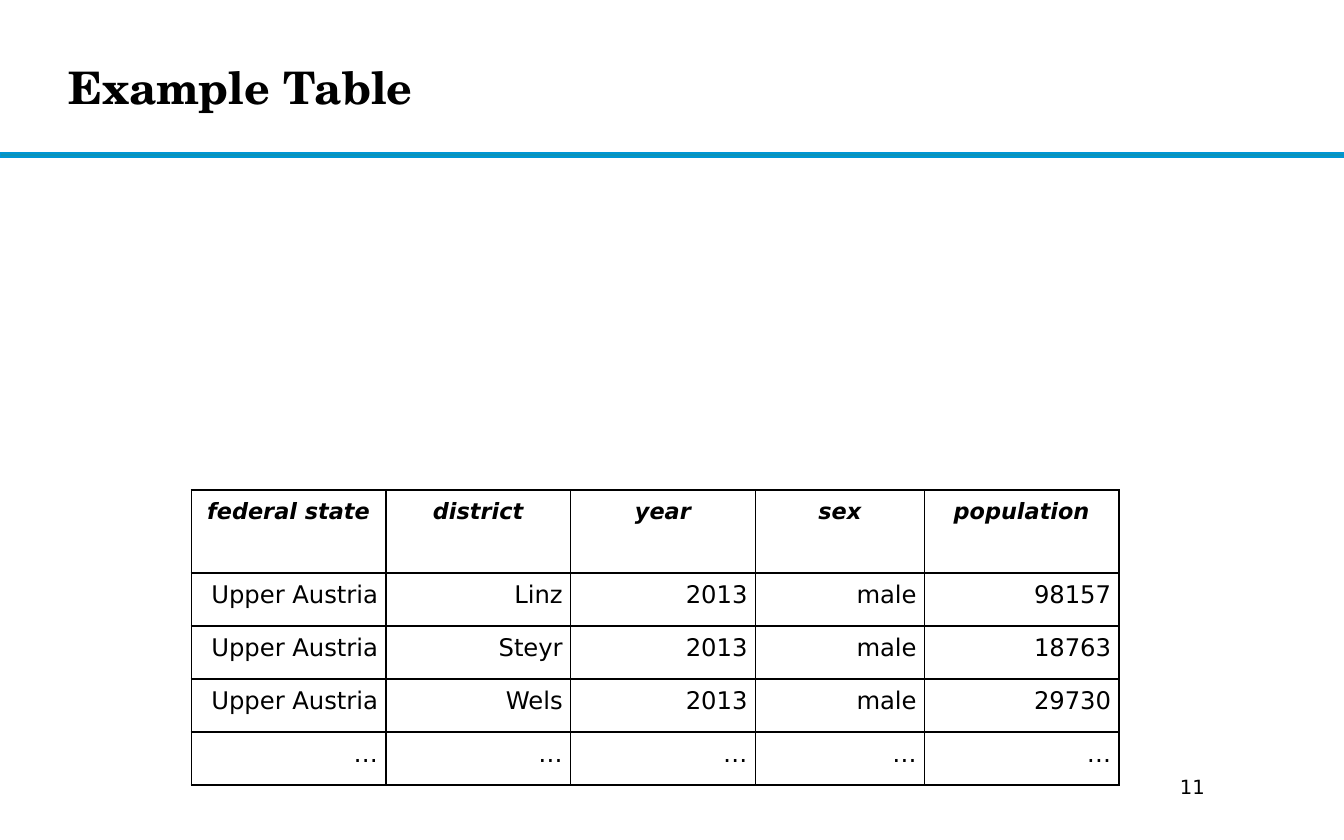
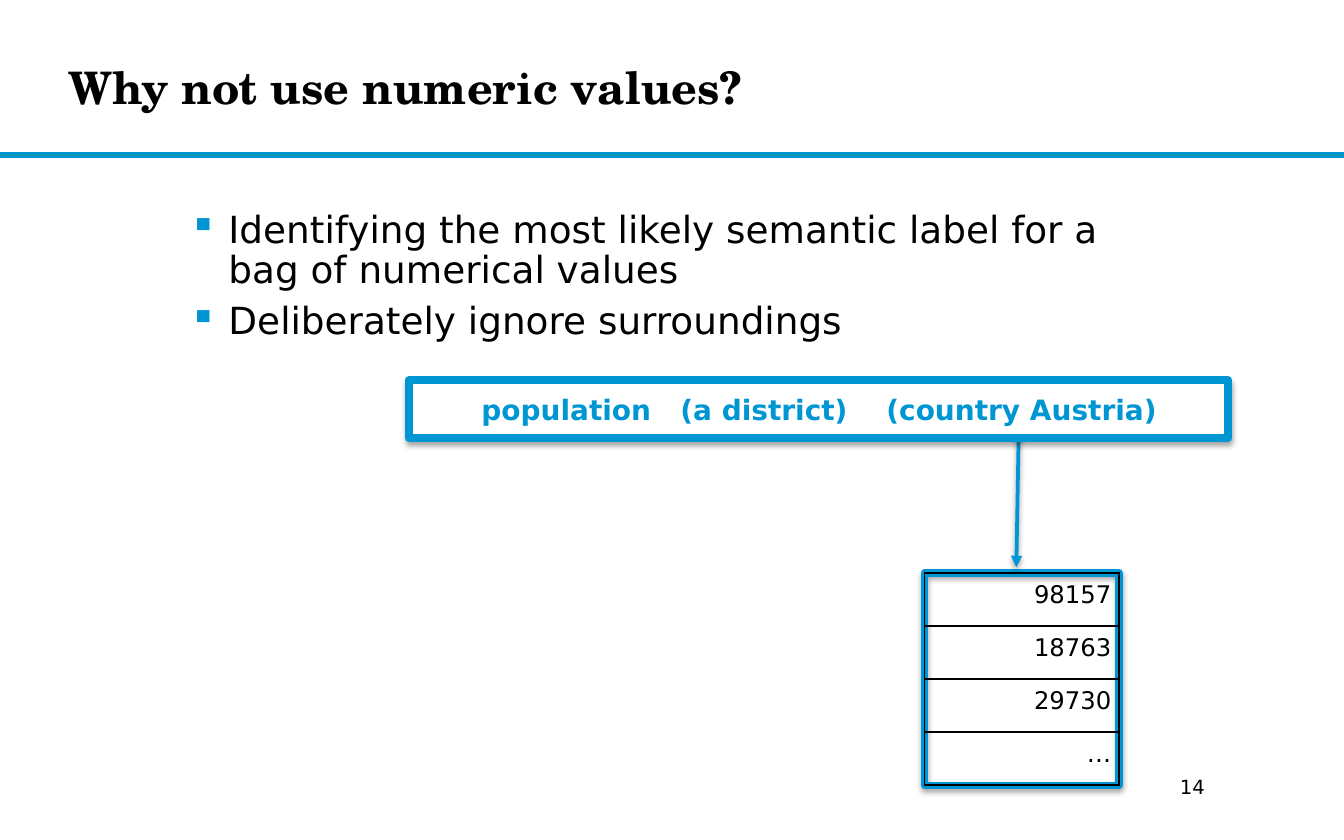
import pptx
import pptx.dml.color
import pptx.enum.shapes
import pptx.enum.text
import pptx.oxml
import pptx.oxml.ns
import pptx.util

Pt = pptx.util.Pt
RGBColor = pptx.dml.color.RGBColor
Align = pptx.enum.text.PP_ALIGN
Anchor = pptx.enum.text.MSO_ANCHOR
Shape = pptx.enum.shapes.MSO_SHAPE
Line = pptx.enum.shapes.MSO_CONNECTOR

BLACK = RGBColor(0x00, 0x00, 0x00)
WHITE = RGBColor(0xFF, 0xFF, 0xFF)
BLUE = RGBColor(0x00, 0x96, 0xD3)
TEAL = RGBColor(0x0C, 0x94, 0xB7)

SANS = "DejaVu Sans"
SERIF = "TeX Gyre Schola"
HEAD = dict(name=SERIF, size=Pt(24), bold=True)
BODY = dict(name=SANS, size=Pt(20))
PAGE = dict(name=SANS, size=Pt(10.5))
LABEL = dict(name=SANS, size=Pt(15), bold=True)
TOP = dict(name=SANS, size=Pt(12), bold=True, italic=True)
CELL = dict(name=SANS, size=Pt(13), bold=False)

ROW = 28.45
FIRST = 44.3
LEFT = 102.5
BASE = 262.6
COLS = [104.2, 99, 99, 90.6, 104.2]
LAST = LEFT + sum(COLS[:-1])
FIELDS = ["federal state", "district", "year", "sex", "population"]
COUNTS = ["98157", "18763", "29730", "…"]
TOWNS = ["Linz", "Steyr", "Wels"]


def put(item, values):
    for key, value in values.items():
        setattr(item, key, value)


def add(parent, text):
    node = pptx.oxml.parse_xml(text.replace(
        ">" if "/>" not in text.split(">")[0] + ">" else "/>",
        f' {pptx.oxml.ns.nsdecls("a")}>' if "/>" not in text.split(">")[0] + ">"
        else f' {pptx.oxml.ns.nsdecls("a")}/>', 1))
    parent.append(node)
    return node


class Deck:
    def __init__(self):
        self.file = pptx.Presentation()
        put(self.file, dict(slide_width=Pt(720), slide_height=Pt(450)))
        self.slide = None

    def start(self, title, page):
        self.slide = self.file.slides.add_slide(self.file.slide_layouts[6])
        self.box(0, 82, 720, 2.2, TEAL, 1)
        self.text(36.5, 10.8, 538.6, 71.3, [title], HEAD, (0, 0), Anchor.MIDDLE)
        self.text(625, 411.8, 44.6, 20.2, [page], PAGE, (7.2, 3.6))

    def style(self, para, form, color=BLACK):
        put(para.font, form)
        para.font.color.rgb = color

    def frame(self, frame, side, edge, anchor):
        put(frame, dict(word_wrap=True, vertical_anchor=anchor,
                        margin_left=Pt(side), margin_right=Pt(side),
                        margin_top=Pt(edge), margin_bottom=Pt(edge)))

    def text(self, x, y, w, h, lines, form, inset, anchor=Anchor.TOP, mark=None):
        frame = self.slide.shapes.add_textbox(Pt(x), Pt(y), Pt(w), Pt(h)).text_frame
        self.frame(frame, *inset, anchor)
        for i, line in enumerate(lines):
            para = frame.add_paragraph() if i else frame.paragraphs[0]
            para.text = line
            if mark:
                self.mark(para, mark)
            self.style(para, form)

    def mark(self, para, sign):
        prop = para._p.get_or_add_pPr()
        prop.set("marL", str(Pt(20.9)))
        prop.set("indent", str(-Pt(20.9)))
        add(prop, f'<a:buClr><a:srgbClr val="{BLUE}"/></a:buClr>')
        add(prop, f'<a:buChar char="{sign}"/>')
        put(para, dict(line_spacing=0.9, space_after=Pt(6)))

    def shade(self, prop, alpha, drop):
        part = prop.find(pptx.oxml.ns.qn("a:effectLst"))
        add(part, f'<a:outerShdw blurRad="{Pt(3)}" dist="{Pt(drop)}" dir="5400000" '
                  f'rotWithShape="0"><a:srgbClr val="{BLACK}">'
                  f'<a:alpha val="{alpha * 1000}"/></a:srgbClr></a:outerShdw>')

    def box(self, x, y, w, h, fill, width, shade=False):
        shape = self.slide.shapes.add_shape(Shape.RECTANGLE, Pt(x), Pt(y), Pt(w), Pt(h))
        shape.shadow.inherit = False
        if fill is None:
            shape.fill.background()
        else:
            shape.fill.solid()
            shape.fill.fore_color.rgb = fill
        shape.line.color.rgb = BLUE
        shape.line.width = Pt(width)
        if shade:
            self.shade(shape._element.spPr, 35, 1.8)
        return shape

    def label(self, x, y, w, h, parts, stops):
        frame = self.box(x, y, w, h, WHITE, 4, True).text_frame
        self.frame(frame, 2.9, 3.6, Anchor.MIDDLE)
        frame.margin_left = Pt(38.9)
        para = frame.paragraphs[0]
        para.text = "\t".join(parts)
        para.alignment = Align.LEFT
        tabs = add(para._p.get_or_add_pPr(), "<a:tabLst></a:tabLst>")
        for stop in stops:
            add(tabs, f'<a:tab pos="{Pt(stop)}" algn="l"/>')
        self.style(para, LABEL, BLUE)

    def arrow(self, x, y, to_x, to_y):
        link = self.slide.shapes.add_connector(
            Line.STRAIGHT, Pt(x), Pt(y), Pt(to_x), Pt(to_y))
        link.line.color.rgb = BLUE
        link.line.width = Pt(2)
        prop = link._element.spPr
        for end in ("head", "tail"):
            add(prop.find(pptx.oxml.ns.qn("a:ln")), f'<a:{end}End type="triangle"/>')
        add(prop, "<a:effectLst></a:effectLst>")
        self.shade(prop, 38, 1.6)

    def table(self, x, y, cols, rows, data, top=False):
        table = self.slide.shapes.add_table(
            len(rows), len(cols), Pt(x), Pt(y), Pt(sum(cols)), Pt(sum(rows))).table
        put(table, dict(first_row=top, horz_banding=False))
        for col, width in zip(table.columns, cols):
            col.width = Pt(width)
        for i, (row, height) in enumerate(zip(table.rows, rows)):
            row.height = Pt(height)
            for cell, value in zip(row.cells, data[i]):
                self.cell(cell, value, top and i == 0)

    def cell(self, cell, value, top):
        put(cell, dict(text=value, margin_left=Pt(4.3), margin_right=Pt(4.3),
                       margin_top=Pt(4.3), margin_bottom=Pt(4.3)))
        para = cell.text_frame.paragraphs[0]
        para.alignment = Align.CENTER if top else Align.RIGHT
        self.style(para, TOP if top else CELL)
        prop = cell._tc.get_or_add_tcPr()
        for side in "LRTB":
            add(prop, f'<a:ln{side} w="{Pt(1)}"><a:solidFill>'
                      f'<a:srgbClr val="{BLACK}"/></a:solidFill></a:ln{side}>')
        cell.fill.background()


def main():
    deck = Deck()

    deck.start("Example Table", "11")
    data = [["Upper Austria", town, "2013", "male", count]
            for town, count in zip(TOWNS, COUNTS)]
    deck.table(LEFT, BASE, COLS, [FIRST] + [ROW] * 4,
               [FIELDS] + data + [["…"] * len(COLS)], True)

    deck.start("Why not use numeric values?", "14")
    top = BASE + FIRST
    deck.box(LAST, top, COLS[-1], 4 * ROW, None, 4, True)
    deck.arrow(545.8, 228.2, 544.5, 303.8)
    deck.label(219, 203.6, 439, 31,
               ["population", "(a district)", "(country Austria)"], [106.6, 217])
    deck.text(101.5, 109.4, 517.7, 84.2,
              ["Identifying the most likely semantic label for a bag of numerical values",
               "Deliberately ignore surroundings"], BODY, (0, 3.6), mark="▪")
    deck.table(LAST, top, COLS[-1:], [ROW] * 4, [[count] for count in COUNTS])

    deck.file.save("out.pptx")


if __name__ == "__main__":
    main()
